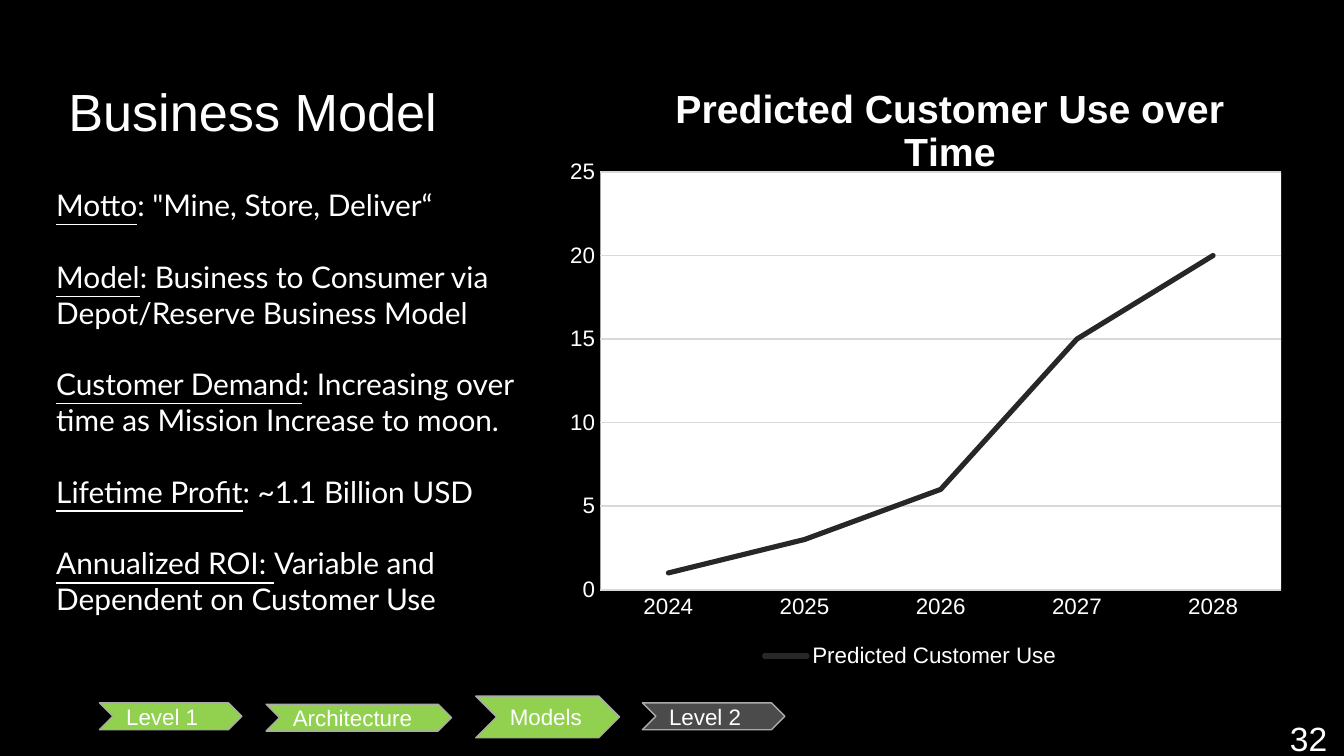
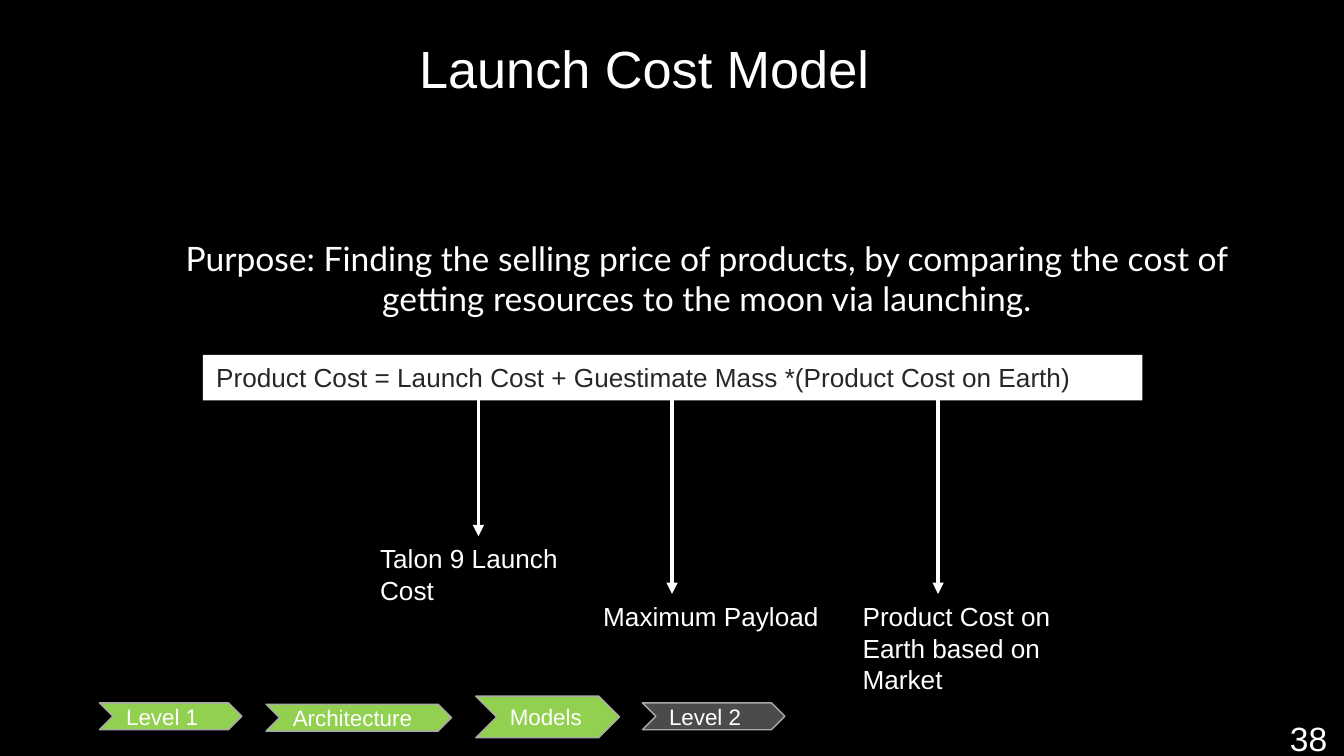
from typing import NamedTuple

from lxml import etree
from pptx import Presentation
from pptx.chart.data import CategoryChartData
from pptx.dml.color import RGBColor
from pptx.enum.chart import XL_CHART_TYPE, XL_LEGEND_POSITION, XL_TICK_MARK
from pptx.enum.shapes import MSO_CONNECTOR, MSO_SHAPE
from pptx.enum.text import MSO_ANCHOR, MSO_AUTO_SIZE, PP_ALIGN
from pptx.oxml.ns import qn
from pptx.util import Inches, Pt

LINE = XL_CHART_TYPE.LINE_STACKED
BOTTOM = XL_LEGEND_POSITION.BOTTOM
NO_TICK = XL_TICK_MARK.NONE
STRAIGHT = MSO_CONNECTOR.STRAIGHT
CHEVRON = MSO_SHAPE.CHEVRON
RECT = MSO_SHAPE.RECTANGLE
TOP = MSO_ANCHOR.TOP
MIDDLE = MSO_ANCHOR.MIDDLE
GROW = MSO_AUTO_SIZE.SHAPE_TO_FIT_TEXT
LEFT = PP_ALIGN.LEFT
CENTER = PP_ALIGN.CENTER

COLORS = {
    "black": "000000",
    "white": "FFFFFF",
    "ink": "272727",
    "green": "92D050",
    "slate": "4B4B4B",
    "edge": "AAAAAA",
    "grid": "D9D9D9",
}
SANS = "Arial"
BODY = "Lato"


class Box(NamedTuple):
    left: float
    top: float
    width: float
    height: float


class Step(NamedTuple):
    text: str
    box: Box
    fill: str = "green"


class Fact(NamedTuple):
    head: str
    rest: str


class Term(NamedTuple):
    text: str
    x: float
    box: Box


STEPS = (
    Step("Models", Box(3.54, 5.18, 1.07, 0.31)),
    Step("Level 1", Box(0.74, 5.23, 1.06, 0.2)),
    Step("Level 2", Box(4.78, 5.23, 1.06, 0.2), "slate"),
    Step("Architecture", Box(1.98, 5.24, 1.38, 0.2)),
)
FACTS = (
    Fact("Motto", ": \"Mine, Store, Deliver“"),
    Fact("Model", ": Business to Consumer via Depot/Reserve Business Model"),
    Fact("Customer Demand", ": Increasing over time as Mission Increase to moon."),
    Fact("Lifetime Profit", ": ~1.1 Billion USD"),
    Fact("Annualized ROI: ", "Variable and Dependent on Customer Use"),
)
PURPOSE = (
    "Purpose: Finding the selling price of products, by comparing "
    "the cost of getting resources to the moon via launching."
)
PRICE = "Product Cost = Launch Cost + Guestimate Mass *(Product Cost on Earth)"
PRICE_BOX = Box(1.51, 2.64, 6.99, 0.34)
TERMS = (
    Term("Talon 9 Launch Cost", 3.56, Box(2.73, 3.99, 1.66, 0.57)),
    Term("Maximum Payload", 5, Box(4.39, 4.42, 1.93, 0.34)),
    Term("Product Cost on Earth based on Market", 6.98, Box(6.32, 4.42, 1.93, 0.81)),
)
USE = {"2024": 1, "2025": 3, "2026": 6, "2027": 15, "2028": 20}


def tint(name: str) -> RGBColor:
    return RGBColor.from_string(COLORS[name])


def place(box: Box) -> tuple:
    return tuple(Inches(side) for side in box)


def style(font, size: float, color: str = "white", face: str = SANS) -> None:
    font.size = Pt(size)
    font.name = face
    font.color.rgb = tint(color)


def paint(line, color: str, width: float) -> None:
    line.color.rgb = tint(color)
    line.width = Pt(width)


def set_frame(frame, anchor=TOP, pad: float = 0.05) -> None:
    frame.word_wrap = True
    frame.vertical_anchor = anchor
    frame.margin_top = frame.margin_bottom = Inches(pad)


def indent(para) -> None:
    props = para._p.get_or_add_pPr()
    props.set("marL", str(Inches(0.14)))
    props.set("indent", "0")


def add_text(slide, text: str, box: Box, size: float, face: str = SANS,
             anchor=TOP, pad: float = 0.05):
    shape = slide.shapes.add_textbox(*place(box))
    set_frame(shape.text_frame, anchor, pad)
    para = shape.text_frame.paragraphs[0]
    para.text = text
    style(para.font, size, face=face)
    return shape


def add_block(slide, kind, text: str, box: Box, fill: str, size: float, color: str):
    shape = slide.shapes.add_shape(kind, *place(box))
    shape.shadow.inherit = False
    shape.fill.solid()
    shape.fill.fore_color.rgb = tint(fill)
    shape.line.fill.background()
    para = shape.text_frame.paragraphs[0]
    para.text = text
    para.alignment = LEFT
    style(para.font, size, color)
    return shape


def add_step(slide, step: Step) -> None:
    shape = add_block(slide, CHEVRON, step.text, step.box, step.fill, 12, "white")
    paint(shape.line, "edge", 0.75)
    set_frame(shape.text_frame, MIDDLE, 0.1)


def add_arrow(slide, x: float, start: float, end: float) -> None:
    arrow = slide.shapes.add_connector(
        STRAIGHT, Inches(x), Inches(start), Inches(x), Inches(end))
    paint(arrow.line, "white", 2)
    etree.SubElement(arrow.line._get_or_add_ln(), qn("a:tailEnd"), type="triangle")
    etree.SubElement(arrow._element.spPr, qn("a:effectLst"))


def add_page(deck, title: str, box: Box, number: int):
    slide = deck.slides.add_slide(deck.slide_layouts[6])
    slide.background.fill.solid()
    slide.background.fill.fore_color.rgb = tint("black")
    head = add_text(slide, title, box, 28, anchor=MIDDLE)
    head.text_frame.paragraphs[0].line_spacing = 0.9
    add_text(slide, str(number), Box(9.5, 5.3, 0.5, 0.39), 18, anchor=MIDDLE)
    for step in STEPS:
        add_step(slide, step)
    return slide


def add_facts(slide) -> None:
    shape = slide.shapes.add_textbox(*place(Box(0.18, 1.14, 3.78, 3.88)))
    frame = shape.text_frame
    set_frame(frame, MIDDLE, 0.1)
    frame.margin_bottom = Inches(0.28)
    for i, fact in enumerate(FACTS):
        para = frame.add_paragraph() if i else frame.paragraphs[0]
        indent(para)
        style(para.font, 16, face=BODY)
        if i:
            para.space_before = Pt(19.2)
        head = para.add_run()
        head.text = fact.head
        head.font.underline = True
        para.add_run().text = fact.rest


def set_layout(parent, after: str, **parts) -> None:
    for old in parent.findall(qn("c:layout")):
        parent.remove(old)
    layout = etree.Element(qn("c:layout"))
    manual = etree.SubElement(layout, qn("c:manualLayout"))
    for tag, value in parts.items():
        etree.SubElement(manual, qn(f"c:{tag}"), val=str(value))
    spot = parent.find(qn(after)) if after else None
    parent.insert(0 if spot is None else parent.index(spot) + 1, layout)


def add_graph(slide) -> None:
    data = CategoryChartData()
    data.categories = list(USE)
    data.add_series("Predicted Customer Use", list(USE.values()))
    box = Box(3.96, 0.57, 5.63, 4.44)
    chart = slide.shapes.add_chart(LINE, *place(box), data).chart
    style(chart.font, 10)

    chart.has_title = True
    title = chart.chart_title
    para = title.text_frame.paragraphs[0]
    para.text = "Predicted Customer Use over Time"
    style(para.font, 21)
    para.font.bold = True
    set_layout(title._element, "c:tx", xMode="edge", yMode="edge", x=0.18, y=-0.01)

    chart.has_legend = True
    chart.legend.position = BOTTOM
    chart.legend.include_in_layout = False
    style(chart.legend.font, 12)

    for axis in (chart.category_axis, chart.value_axis):
        axis.major_tick_mark = axis.minor_tick_mark = NO_TICK
        style(axis.tick_labels.font, 12)
    paint(chart.category_axis.format.line, "grid", 1)
    values = chart.value_axis
    values.format.line.fill.background()
    values.minimum_scale, values.maximum_scale, values.major_unit = 0, 25, 5
    values.has_major_gridlines = True
    paint(values.major_gridlines.format.line, "grid", 0.75)

    plot = chart.plots[0]
    plot.vary_by_categories = False
    curve = plot.series[0]
    curve.smooth = False
    paint(curve.format.line, "ink", 2.75)
    curve.format.line._get_or_add_ln().set("cap", "rnd")

    area = chart._chartSpace.chart.plotArea
    set_layout(area, "", layoutTarget="inner", xMode="edge", yMode="edge",
               x=0.09, y=0.16, w=0.9, h=0.7)
    props = etree.SubElement(area, qn("c:spPr"))
    fill = etree.SubElement(props, qn("a:solidFill"))
    etree.SubElement(fill, qn("a:srgbClr"), val=COLORS["white"])


def build_plan(deck) -> None:
    slide = add_page(deck, "Business Model", Box(0.41, 0.57, 3.01, 0.56), 32)
    add_graph(slide)
    add_facts(slide)


def build_launch(deck) -> None:
    slide = add_page(deck, "Launch Cost Model", Box(3.02, 0.25, 3.82, 0.56), 38)
    goal = add_text(slide, PURPOSE, Box(0.78, 1.32, 8.82, 1.5), 18, BODY, MIDDLE, 0.1)
    para = goal.text_frame.paragraphs[0]
    para.alignment = CENTER
    indent(para)
    price = add_block(slide, RECT, PRICE, PRICE_BOX, "white", 14, "ink")
    set_frame(price.text_frame)
    price.text_frame.auto_size = GROW
    for term in TERMS:
        add_arrow(slide, term.x, PRICE_BOX.top + PRICE_BOX.height, term.box.top)
        label = add_text(slide, term.text, term.box, 14)
        label.text_frame.auto_size = GROW


def main() -> None:
    deck = Presentation()
    deck.slide_width = Inches(10)
    deck.slide_height = deck.slide_width * 9 // 16
    build_plan(deck)
    build_launch(deck)
    deck.save("out.pptx")


if __name__ == "__main__":
    main()
